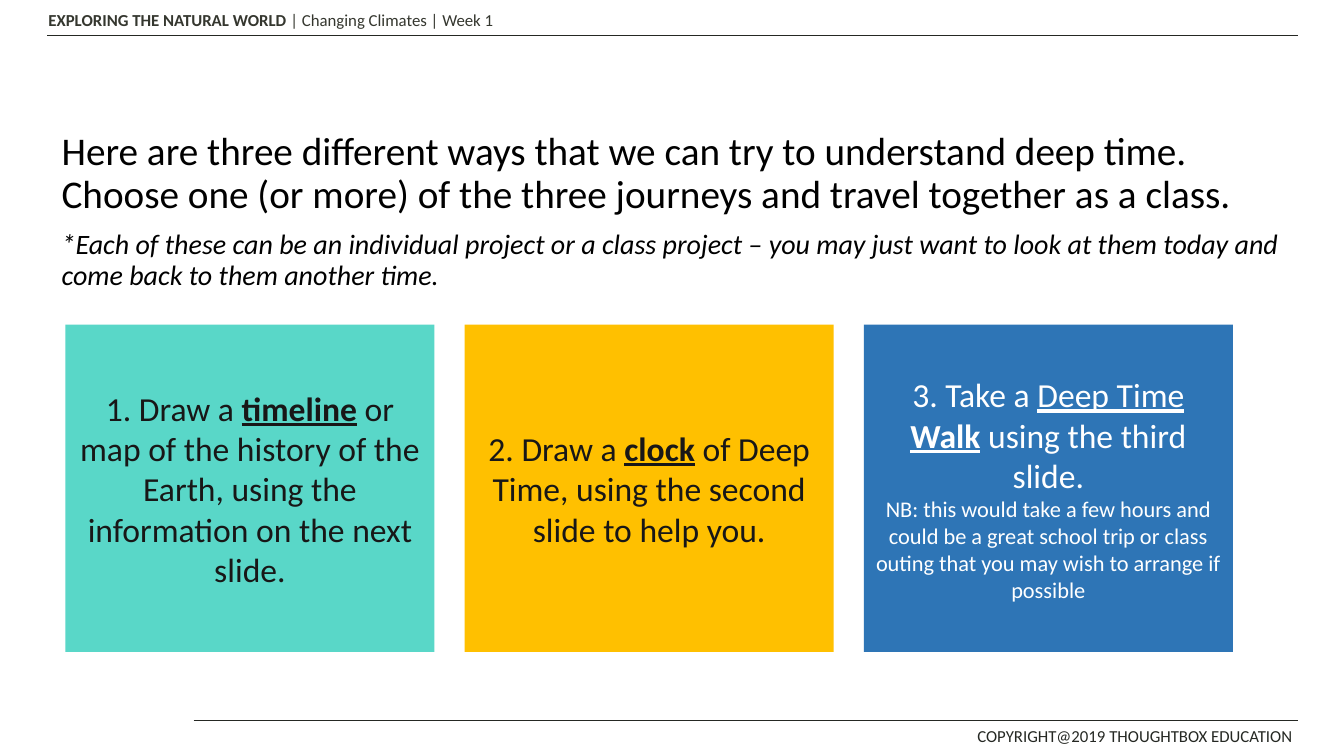
from dataclasses import dataclass

from lxml.etree import SubElement
from pptx import Presentation
from pptx.dml.color import RGBColor as Rgb
from pptx.enum.shapes import MSO_CONNECTOR as Conn, MSO_SHAPE as Geom
from pptx.enum.text import MSO_ANCHOR as Anchor, MSO_AUTO_SIZE as Fit, PP_ALIGN as Align
from pptx.oxml.ns import qn
from pptx.slide import Slide
from pptx.text.text import TextFrame, _Paragraph as Para
from pptx.util import Cm, Pt

HUES = {
    "rule": "252823",
    "head": "35372F",
    "black": "000000",
    "ink": "181717",
    "white": "FFFFFF",
    "teal": "59D7C8",
    "gold": "FFC000",
    "blue": "2E75B6",
}


@dataclass
class Span:
    text: str
    bold: bool = False
    line: bool = False
    slant: bool = False


@dataclass
class Row:
    spans: list[Span]
    size: int
    hue: str


@dataclass
class Card:
    fill: str
    rows: list[Row]


@dataclass
class Rule:
    left: float
    top: float
    right: float


@dataclass
class Label:
    left: float
    top: float
    width: float
    height: float
    wrap: bool
    row: Row


RULES = [Rule(1.19, 0.89, 32.72), Rule(4.88, 18.16, 32.72)]

LABELS = [
    Label(24.38, 18.16, 8.64, 0.79, True,
          Row([Span("COPYRIGHT@2019 THOUGHTBOX EDUCATION")], 12, "rule")),
    Label(0.97, 0.13, 12.12, 0.76, False,
          Row([Span("EXPLORING THE NATURAL WORLD ", bold=True),
               Span("| Changing Climates | Week 1")], 12, "head")),
]

INTRO = [
    Row([Span("Here are three different ways that we can try to understand deep time. "
              "Choose one (or more) of the three journeys and travel together as a class.")],
        28, "black"),
    Row([Span("*Each of these can be an individual project or a class project – you may "
              "just want to look at them today and come back to them another time.",
              slant=True)], 20, "black"),
]

CARDS = [
    Card("teal", [Row([Span("1. Draw a "), Span("timeline", True, True),
                       Span(" or map of the history of the Earth, using the "
                            "information on the next slide.")], 24, "ink")]),
    Card("gold", [Row([Span("2. Draw a "), Span("clock", True, True),
                       Span(" of Deep Time, using the second slide to help you.")],
                      24, "ink")]),
    Card("blue", [Row([Span("3. Take a "), Span("Deep Time ", line=True),
                       Span("Walk", True, True), Span(" using the third slide.")],
                      24, "white"),
                  Row([Span("NB: this would take a few hours and could be a great school "
                            "trip or class outing that you may wish to arrange if possible")],
                      16, "white")]),
]


def tint(name: str) -> Rgb:
    return Rgb.from_string(HUES[name])


def write(para: Para, row: Row) -> None:
    for span in row.spans:
        run = para.add_run()
        run.text = span.text
        font = run.font
        font.name = "Calibri"
        font.size = Pt(row.size)
        font.bold = span.bold
        font.italic = span.slant
        font.underline = span.line
        font.color.rgb = tint(row.hue)


def fill(frame: TextFrame, rows: list[Row]) -> list[Para]:
    paras = [frame.paragraphs[0]] + [frame.add_paragraph() for _ in rows[1:]]
    for para, row in zip(paras, rows):
        write(para, row)
    return paras


def draw_rule(slide: Slide, rule: Rule) -> None:
    line = slide.shapes.add_connector(
        Conn.STRAIGHT, Cm(rule.left), Cm(rule.top), Cm(rule.right), Cm(rule.top))
    line.line.color.rgb = tint("rule")
    line.line.width = Pt(1)
    SubElement(line._element.spPr, qn("a:effectLst"))


def draw_label(slide: Slide, label: Label) -> None:
    box = slide.shapes.add_textbox(
        Cm(label.left), Cm(label.top), Cm(label.width), Cm(label.height))
    box.text_frame.word_wrap = label.wrap
    box.text_frame.auto_size = Fit.SHAPE_TO_FIT_TEXT
    fill(box.text_frame, [label.row])


def draw_intro(slide: Slide) -> None:
    body = slide.placeholders[1]
    body.left, body.top, body.width, body.height = Cm(1.3), Cm(3.2), Cm(31.5), Cm(13.23)
    frame = body.text_frame
    frame.word_wrap = True
    frame.auto_size = Fit.NONE
    frame.vertical_anchor = Anchor.TOP
    for place, para in enumerate(fill(frame, INTRO)):
        props = para._p.get_or_add_pPr()
        props.set("marL", "0")
        props.set("indent", "0")
        SubElement(props, qn("a:buNone"))
        para.line_spacing = 0.9
        para.space_before = Pt(10 if place else 0)


def draw_card(slide: Slide, card: Card, place: int) -> None:
    box = slide.shapes.add_shape(
        Geom.RECTANGLE, Cm(1.65 + 10.06 * place), Cm(8.18), Cm(9.3), Cm(8.25))
    box.shadow.inherit = False
    box.fill.solid()
    box.fill.fore_color.rgb = tint(card.fill)
    box.line.fill.background()
    box.text_frame.word_wrap = True
    box.text_frame.vertical_anchor = Anchor.MIDDLE
    for para in fill(box.text_frame, card.rows):
        para.alignment = Align.CENTER


def main() -> None:
    deck = Presentation()
    deck.slide_width, deck.slide_height = Cm(33.87), Cm(19.05)
    slide = deck.slides.add_slide(deck.slide_layouts[1])
    title = slide.shapes.title._element
    title.getparent().remove(title)
    for rule in RULES:
        draw_rule(slide, rule)
    for label in LABELS:
        draw_label(slide, label)
    draw_intro(slide)
    for place, card in enumerate(CARDS):
        draw_card(slide, card, place)
    deck.save("out.pptx")


if __name__ == "__main__":
    main()
